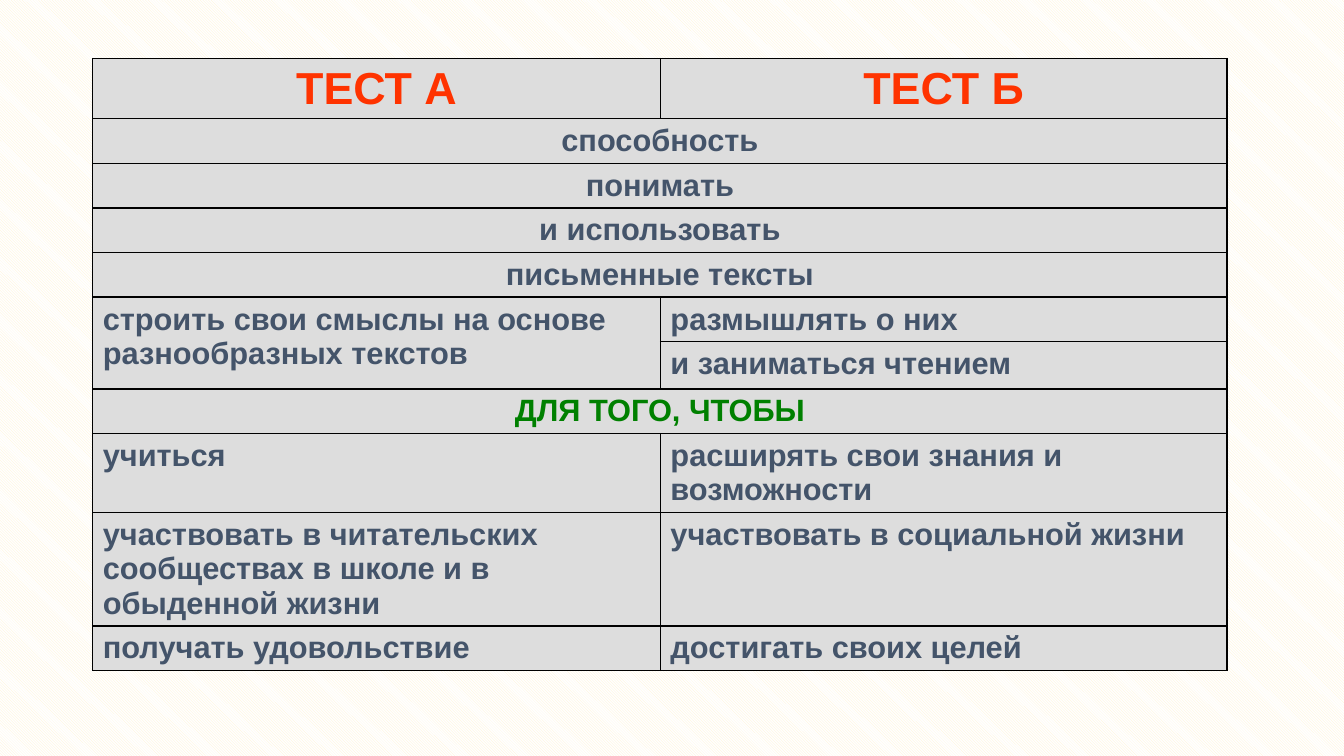
from lxml import etree
from pptx import Presentation
from pptx.dml.color import RGBColor
from pptx.enum.dml import MSO_PATTERN
from pptx.enum.text import PP_ALIGN
from pptx.oxml.ns import qn
from pptx.util import Inches, Pt

SLATE, ORANGE, GREEN = "44546A", "FF3300", "008000"
HANGING = Inches(0.38)


def color(value):
    return RGBColor.from_string(value)


def write(cell, text, size=22, ink=SLATE, align=PP_ALIGN.LEFT, hanging=True):
    paragraph = cell.text_frame.paragraphs[0]
    paragraph.alignment = align
    if hanging:
        properties = paragraph._p.get_or_add_pPr()
        properties.set("marL", str(HANGING))
        properties.set("indent", str(-HANGING))
    run = paragraph.add_run()
    run.text = text
    run.font.name = "Arial"
    run.font.size = Pt(size)
    run.font.bold = True
    run.font.color.rgb = color(ink)


presentation = Presentation()
presentation.slide_width = Inches(13.33)
presentation.slide_height = Inches(7.5)
slide = presentation.slides.add_slide(presentation.slide_layouts[6])

background = slide.background.fill
background.patterned()
background.pattern = MSO_PATTERN.LIGHT_DOWNWARD_DIAGONAL
background.fore_color.rgb = color("FFF2CC")
background.back_color.rgb = color("FFFFFF")

# One text spans both columns; None continues the cell above.
rows = [
    (0.57, ["ТЕСТ А", "ТЕСТ Б"]),
    (0.41, ["способность"]),
    (0.41, ["понимать"]),
    (0.41, ["и использовать"]),
    (0.41, ["письменные тексты"]),
    (0.41, ["строить свои смыслы на основе разнообразных текстов", "размышлять о них"]),
    (0.47, [None, "и заниматься чтением"]),
    (0.41, ["ДЛЯ ТОГО, ЧТОБЫ"]),
    (0.68, ["учиться", "расширять свои знания и возможности"]),
    (0.8, ["участвовать в читательских сообществах в школе и в обыденной жизни",
           "участвовать в социальной жизни"]),
    (0.41, ["получать удовольствие", "достигать своих целей"]),
]

frame = slide.shapes.add_table(len(rows), 2, Inches(0.92), Inches(0.58),
                               Inches(11.25), Inches(6.4))
table = frame.table
table.first_row = False
table.horz_banding = False
table.columns[0].width = Inches(5.63)
table.columns[1].width = Inches(5.62)

for cell in table.iter_cells():
    properties = cell._tc.get_or_add_tcPr()
    for side in ("a:lnL", "a:lnR", "a:lnT", "a:lnB"):
        line = etree.SubElement(properties, qn(side), w=str(Pt(1)))
        line_fill = etree.SubElement(line, qn("a:solidFill"))
        etree.SubElement(line_fill, qn("a:srgbClr"), val="000000")
    cell.fill.solid()
    cell.fill.fore_color.rgb = color("DDDDDD")

for row, (height, texts) in enumerate(rows):
    table.rows[row].height = Inches(height)
    if len(texts) == 1:
        table.cell(row, 0).merge(table.cell(row, 1))
    for column, text in enumerate(texts):
        cell = table.cell(row, column)
        if text is None:
            table.cell(row - 1, column).merge(cell)
        elif row == 0:
            write(cell, text, size=32, ink=ORANGE, align=PP_ALIGN.CENTER)
        elif len(texts) == 1:
            write(cell, text, ink=GREEN if text.isupper() else SLATE,
                  align=PP_ALIGN.CENTER)
        else:
            write(cell, text, hanging=len(text) < 30)

frame.height = Inches(6.4)
presentation.save("out.pptx")
